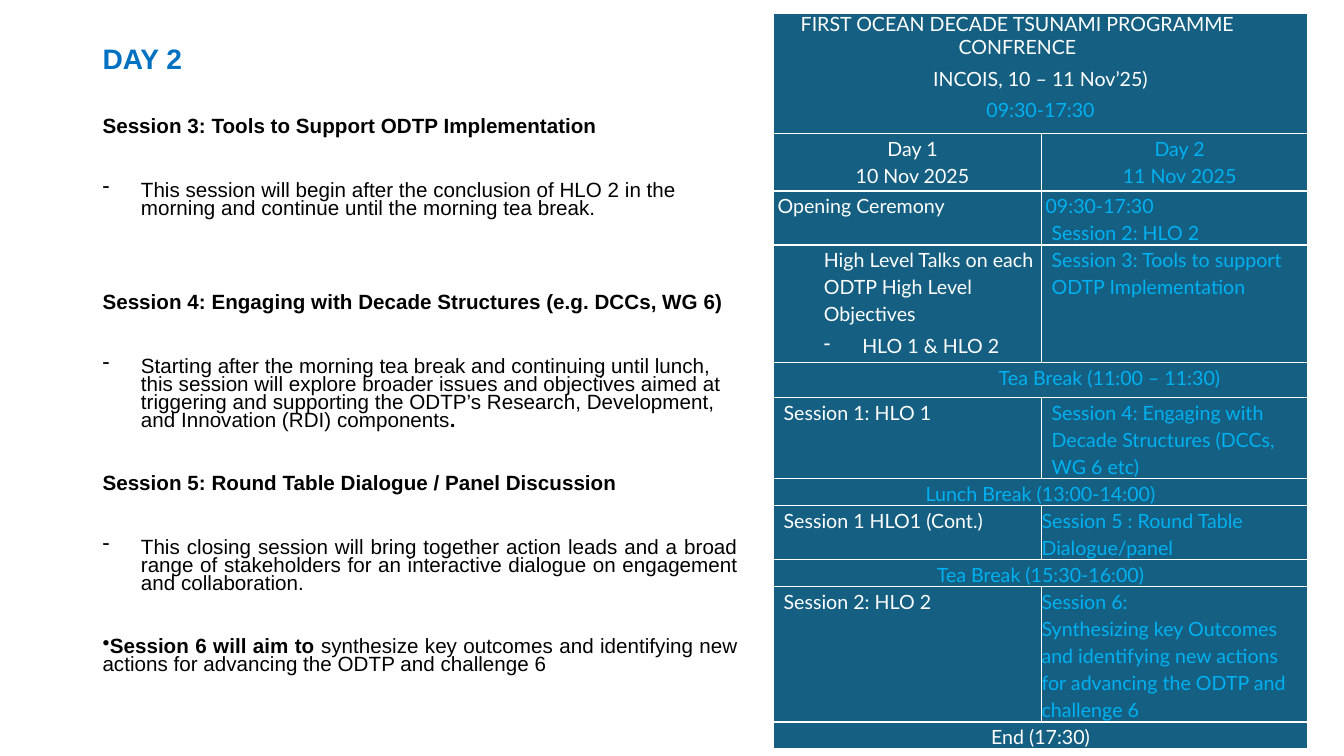
"""Build the Day 2 agenda slide: session notes beside the conference timetable."""
from dataclasses import dataclass
from typing import Optional

from lxml import etree
from pptx import Presentation
from pptx.dml.color import RGBColor
from pptx.enum.text import MSO_ANCHOR, PP_ALIGN
from pptx.oxml.ns import qn
from pptx.util import Pt

LEFT, CENTER, JUSTIFY = PP_ALIGN.LEFT, PP_ALIGN.CENTER, PP_ALIGN.JUSTIFY
TOP = MSO_ANCHOR.TOP


@dataclass(frozen=True)
class Theme:
    body_font: str = "Arial"
    table_font: str = "Lato"
    title_size: float = 20.1
    body_size: float = 14.7
    table_size: float = 14
    title: str = "0070C0"
    body: str = "000000"
    panel: str = "156082"
    white: str = "FFFFFF"
    accent: str = "00B0F0"


@dataclass(frozen=True)
class Run:
    text: str
    bold: bool = False


@dataclass(frozen=True)
class Style:
    font: str
    size: float
    color: str
    line_spacing: float


@dataclass(frozen=True)
class Line:
    runs: tuple[Run, ...]
    style: Style
    align: PP_ALIGN = LEFT
    margin: float = 0
    hanging: float = 0
    right_margin: float = 0
    space_before: float = 0
    bullet: Optional[str] = None


@dataclass(frozen=True)
class Row:
    height: float
    cells: tuple[tuple[Line, ...], ...]


THEME = Theme()
TITLE = Style(THEME.body_font, THEME.title_size, THEME.title, 0.73)
BODY = Style(THEME.body_font, THEME.body_size, THEME.body, 0.73)
HEAD = Style(THEME.table_font, THEME.table_size, THEME.white, 0.97)
HEAD_TIME = Style(THEME.table_font, THEME.table_size, THEME.accent, 0.97)
DAY_ONE = Style(THEME.table_font, THEME.table_size, THEME.white, 1.15)
DAY_TWO = Style(THEME.table_font, THEME.table_size, THEME.accent, 1.15)
GAP, WIDE_GAP = 32.4, 54.7
COLUMN_WIDTHS = (191.5, 190.1)


def heading(text: str, gap: float = GAP) -> Line:
    """Return a bold session heading."""
    return Line((Run(text, True),), BODY, space_before=gap)


def detail(*runs: Run, align: PP_ALIGN = LEFT) -> Line:
    """Return a dashed session description."""
    return Line(runs, BODY, align, 27.4, -27.4, space_before=GAP, bullet="-")


def banner(text: str, style: Style, margin: float = 33, gap: float = 6.2) -> Line:
    """Return a centred line of the table header."""
    return Line((Run(text),), style, CENTER, margin, right_margin=33, space_before=gap)


def entry(text: str, style: Style, margin: float = 7.2, align: PP_ALIGN = LEFT) -> Line:
    """Return a timetable line."""
    return Line((Run(text),), style, align, margin)


def day(name: str, date: str, style: Style) -> tuple[Line, ...]:
    """Return the two centred lines that head a day column."""
    return tuple(entry(text, style, align=CENTER) for text in (name, date))


def full_width(text: str, style: Style, margin: float = 0) -> tuple[tuple[Line, ...], ...]:
    """Return the single cell of a row that spans both days."""
    return ((entry(text, style, margin, CENTER),),)


NOTES = (
    Line((Run("DAY 2", True),), TITLE),
    heading("Session 3: Tools to Support ODTP Implementation"),
    detail(Run("This session will begin after the conclusion of HLO 2 in the morning "
               "and continue until the morning tea break.")),
    heading("Session 4: Engaging with Decade Structures (e.g. DCCs, WG 6)", WIDE_GAP),
    detail(Run("Starting after the morning tea break and continuing until lunch, this session "
               "will explore broader issues and objectives aimed at triggering and supporting "
               "the ODTP’s Research, Development, and Innovation (RDI) components"),
           Run(".", True)),
    heading("Session 5: Round Table Dialogue / Panel Discussion"),
    detail(Run("This closing session will bring together action leads and a broad range of "
               "stakeholders for an interactive dialogue on engagement and collaboration."),
           align=JUSTIFY),
    Line((Run("Session 6 will aim to ", True),
          Run("synthesize key outcomes and identifying new actions for advancing the ODTP "
              "and challenge 6")),
         BODY, JUSTIFY, 0, -18, space_before=GAP, bullet="•"),
)

TIMETABLE = (
    Row(85.7, ((banner("FIRST OCEAN DECADE TSUNAMI PROGRAMME CONFRENCE", HEAD, 0, 0),
                banner("INCOIS, 10 – 11 Nov’25)", HEAD),
                banner("09:30-17:30", HEAD_TIME)),)),
    Row(41, (day("Day 1", "10 Nov 2025", DAY_ONE), day("Day 2", "11 Nov 2025", DAY_TWO))),
    Row(38.6, ((entry("Opening Ceremony", DAY_ONE, 2.9),),
               (entry("09:30-17:30", DAY_TWO, 2.9), entry("Session 2: HLO 2", DAY_TWO)))),
    Row(84.2, ((entry("High Level Talks on each ODTP High Level Objectives", DAY_ONE, 36),
                Line((Run("HLO 1 & HLO 2"),), DAY_ONE, LEFT, 63.4, -27.4,
                     space_before=3, bullet="-")),
               (entry("Session 3: Tools to support ODTP Implementation", DAY_TWO),))),
    Row(24.7, full_width("Tea Break (11:00 – 11:30)", DAY_TWO, 98.6)),
    Row(57.2, ((entry("Session 1: HLO 1", DAY_ONE),),
               (entry("Session 4: Engaging with Decade Structures (DCCs, WG 6 etc)", DAY_TWO),))),
    Row(19.3, full_width("Lunch Break (13:00-14:00)", DAY_TWO)),
    Row(38.6, ((entry("Session 1 HLO1 (Cont.)", DAY_ONE),),
               (entry("Session 5 : Round Table Dialogue/panel", DAY_TWO, 0),))),
    Row(19.3, full_width("Tea Break (15:30-16:00)", DAY_TWO)),
    Row(96.5, ((entry("Session 2: HLO 2", DAY_ONE),),
               (entry("Session 6:", DAY_TWO, 0),
                entry("Synthesizing key Outcomes and identifying new actions for advancing "
                      "the ODTP and challenge 6", DAY_TWO, 0)))),
    Row(19.3, full_width("End (17:30)", DAY_ONE)),
)


def write_lines(text_frame, lines: tuple[Line, ...]) -> None:
    """Write each line as one paragraph of the text frame."""
    text_frame.word_wrap = True
    for index, line in enumerate(lines):
        paragraph = text_frame.paragraphs[0] if index == 0 else text_frame.add_paragraph()
        paragraph.alignment = line.align
        paragraph.line_spacing = line.style.line_spacing
        paragraph.space_before = Pt(line.space_before)
        properties = paragraph._p.get_or_add_pPr()
        for name, length in (("marL", line.margin), ("marR", line.right_margin),
                             ("indent", line.hanging)):
            properties.set(name, str(Pt(length)))
        if line.bullet:
            etree.SubElement(properties, qn("a:buChar")).set("char", line.bullet)
        for part in line.runs:
            run = paragraph.add_run()
            run.text = part.text
            run.font.name = line.style.font
            run.font.size = Pt(line.style.size)
            run.font.bold = part.bold
            run.font.color.rgb = RGBColor.from_string(line.style.color)


def format_cell(cell) -> None:
    """Give a cell white borders, a panel fill and no margins."""
    properties = cell._tc.get_or_add_tcPr()
    for side in ("a:lnL", "a:lnR", "a:lnT", "a:lnB"):
        border = etree.SubElement(properties, qn(side), w=str(Pt(1)))
        fill = etree.SubElement(border, qn("a:solidFill"))
        etree.SubElement(fill, qn("a:srgbClr"), val=THEME.white)
    cell.fill.solid()
    cell.fill.fore_color.rgb = RGBColor.from_string(THEME.panel)
    cell.margin_left = cell.margin_right = cell.margin_top = cell.margin_bottom = Pt(0)
    cell.vertical_anchor = TOP


def add_timetable(slide) -> None:
    """Add the two-day conference timetable."""
    height = sum(row.height for row in TIMETABLE)
    shape = slide.shapes.add_table(len(TIMETABLE), len(COLUMN_WIDTHS), Pt(552.5), Pt(9.7),
                                   Pt(sum(COLUMN_WIDTHS)), Pt(height))
    table = shape.table
    table.first_row = table.horz_banding = False
    for column, width in zip(table.columns, COLUMN_WIDTHS):
        column.width = Pt(width)
    for index, row in enumerate(TIMETABLE):
        table.rows[index].height = Pt(row.height)
        for cell in table.rows[index].cells:
            format_cell(cell)
        if len(row.cells) == 1:
            table.cell(index, 0).merge(table.cell(index, 1))
        for column, lines in enumerate(row.cells):
            write_lines(table.cell(index, column).text_frame, lines)


def main() -> None:
    """Build and save the presentation."""
    presentation = Presentation()
    presentation.slide_width, presentation.slide_height = Pt(960), Pt(540)
    slide = presentation.slides.add_slide(presentation.slide_layouts[6])
    notes = slide.shapes.add_textbox(Pt(66.2), Pt(31.7), Pt(468), Pt(491))
    write_lines(notes.text_frame, NOTES)
    add_timetable(slide)
    presentation.save("out.pptx")


if __name__ == "__main__":
    main()
